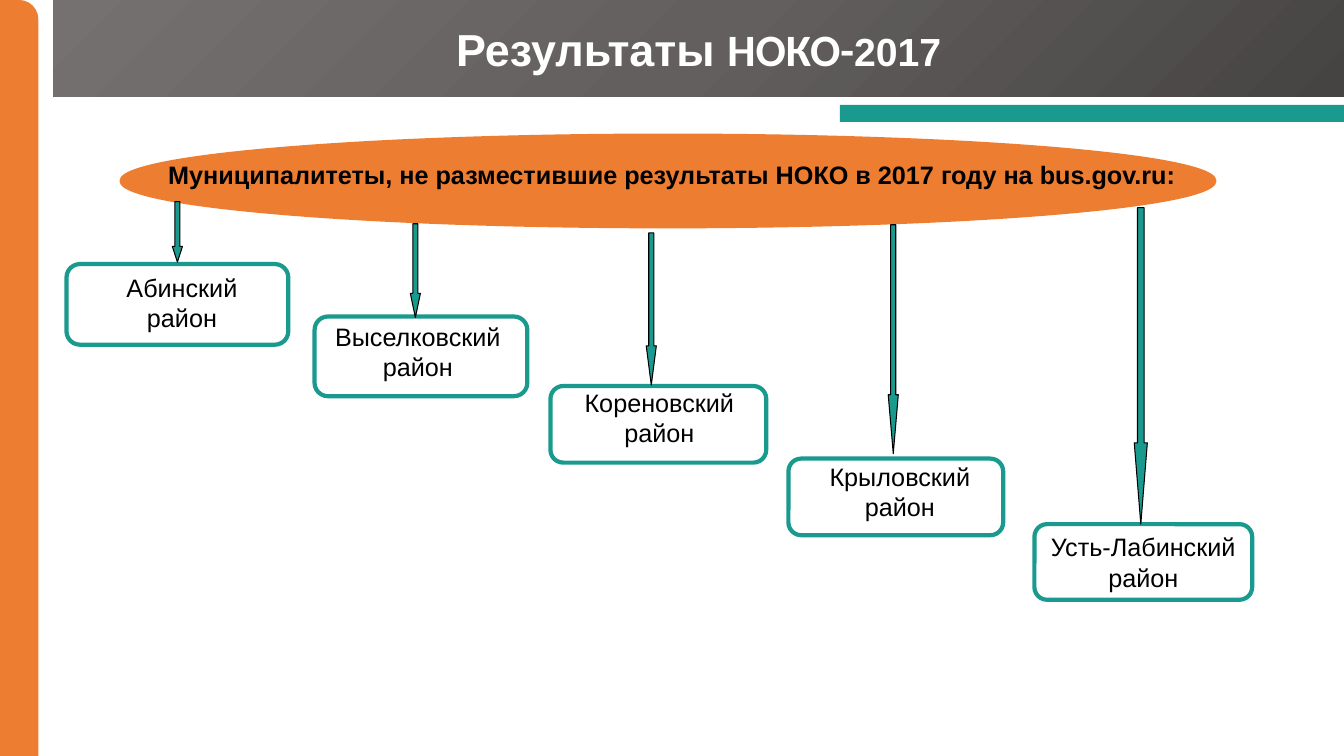
from copy import deepcopy
from dataclasses import dataclass

from pptx import Presentation
from pptx.dml.color import RGBColor
from pptx.enum.shapes import MSO_SHAPE as Form
from pptx.enum.text import MSO_ANCHOR as Anchor, PP_ALIGN as Align
from pptx.util import Inches, Pt

TITLE = [("Результаты ", "Arial", 32), ("НОКО-", "Calibri", 32), ("2017", "Arial", 28)]
CLAIM = "Муниципалитеты, не разместившие результаты НОКО в 2017 году на bus.gov.ru:"

# name, card, separate label or None, arrow; each as left, top, width, height
AREAS = [
    ("Абинский", (0.66, 2.62, 2.2, 0.8), (1.12, 2.65, 1.37, 0.7), (1.71, 2, 0.1, 0.6)),
    ("Выселковский", (3.12, 3.14, 2.11, 0.79), (3.18, 3.14, 1.93, 0.7), (4.07, 2.22, 0.1, 0.93)),
    ("Кореновский", (5.46, 3.83, 2.14, 0.76), (5.52, 3.79, 2.04, 0.7), (6.41, 2.31, 0.1, 1.51)),
    ("Крыловский", (7.82, 4.55, 2.13, 0.76), (7.93, 4.53, 1.99, 0.7), (8.81, 2.23, 0.1, 2.27)),
    ("Усть-Лабинский", (10.26, 5.2, 2.16, 0.75), None, (11.25, 2.06, 0.13, 3.14)),
]
UNIT = "район"
HEAD = 0.257  # share of an arrow's length taken by its head


@dataclass(frozen=True)
class Theme:
    teal: str = "1A9A8E"
    orange: str = "ED7D31"
    white: str = "FFFFFF"
    black: str = "000000"
    grays: tuple = ((0, "464343"), (0.5, "635F5F"), (1, "767171"))
    font: str = "Arial"
    size: int = 18


LOOK = Theme()


def color(code):
    return RGBColor.from_string(code)


def place(box):
    return [Inches(n) for n in box]


def draw(slide, form, box, fill, line=None, width=0):
    shape = slide.shapes.add_shape(form, *place(box))
    shape.shadow.inherit = False
    shape.fill.solid()
    shape.fill.fore_color.rgb = color(fill)
    if line:
        shape.line.color.rgb = color(line)
        shape.line.width = Pt(width)
    else:
        shape.line.fill.background()
    return shape


def write(frame, lines, align, bold=False, wrap=True):
    frame.word_wrap = wrap
    for i, line in enumerate(lines):
        para = frame.add_paragraph() if i else frame.paragraphs[0]
        para.text = line
        para.alignment = align
        para.font.name = LOOK.font
        para.font.size = Pt(LOOK.size)
        para.font.bold = bold
        para.font.color.rgb = color(LOOK.black)


def shade(shape):
    """Fill with the gray gradient, darkest at the lower right."""
    shape.fill.gradient()
    shape.fill.gradient_angle = 135
    stops = shape.fill.gradient_stops
    last = shape._element.spPr.gradFill.gsLst[-1]
    for _ in range(len(LOOK.grays) - len(stops)):
        last.addprevious(deepcopy(last))
    for stop, (spot, code) in zip(shape.fill.gradient_stops, LOOK.grays):
        stop.position = spot
        stop.color.rgb = color(code)


def add_title(slide):
    title = slide.shapes.title
    title.left, title.top, title.width, title.height = place((0.53, 0, 12.8, 0.96))
    shade(title)
    frame = title.text_frame
    frame.vertical_anchor = Anchor.MIDDLE
    para = frame.paragraphs[0]
    para.alignment = Align.CENTER
    para.font.bold = True
    para.font.color.rgb = color(LOOK.white)
    for text, font, size in TITLE:
        run = para.add_run()
        run.text = text
        run.font.name = font
        run.font.size = Pt(size)


def add_area(slide, name, card, label, arrow):
    lines = [name, UNIT]
    plate = draw(slide, Form.ROUNDED_RECTANGLE, card, LOOK.white, LOOK.teal, 3)
    if label:
        note = slide.shapes.add_textbox(*place(label))
        write(note.text_frame, lines, Align.CENTER)
    else:
        plate.text_frame.vertical_anchor = Anchor.MIDDLE
        write(plate.text_frame, lines, Align.CENTER, wrap=False)
    shaft = draw(slide, Form.DOWN_ARROW, arrow, LOOK.teal, LOOK.black, 0.75)
    wide, high = arrow[2:]
    shaft.adjustments[1] = HEAD * high / wide


def main():
    deck = Presentation()
    deck.slide_width, deck.slide_height = Inches(13.33), Inches(7.5)
    slide = deck.slides.add_slide(deck.slide_layouts[5])
    add_title(slide)
    side = draw(slide, Form.ROUND_1_RECTANGLE, (0, 0, 0.38, 7.5), LOOK.orange)
    side.adjustments[0] = 0.5
    draw(slide, Form.RECTANGLE, (8.33, 1.04, 5, 0.17), LOOK.teal)
    draw(slide, Form.OVAL, (1.2, 1.34, 10.85, 0.91), LOOK.orange, LOOK.orange, 2.25)
    claim = slide.shapes.add_textbox(*place((1.57, 1.53, 10.63, 0.4)))
    write(claim.text_frame, [CLAIM], Align.LEFT, bold=True)
    for area in AREAS:
        add_area(slide, *area)
    deck.save("out.pptx")


if __name__ == "__main__":
    main()
